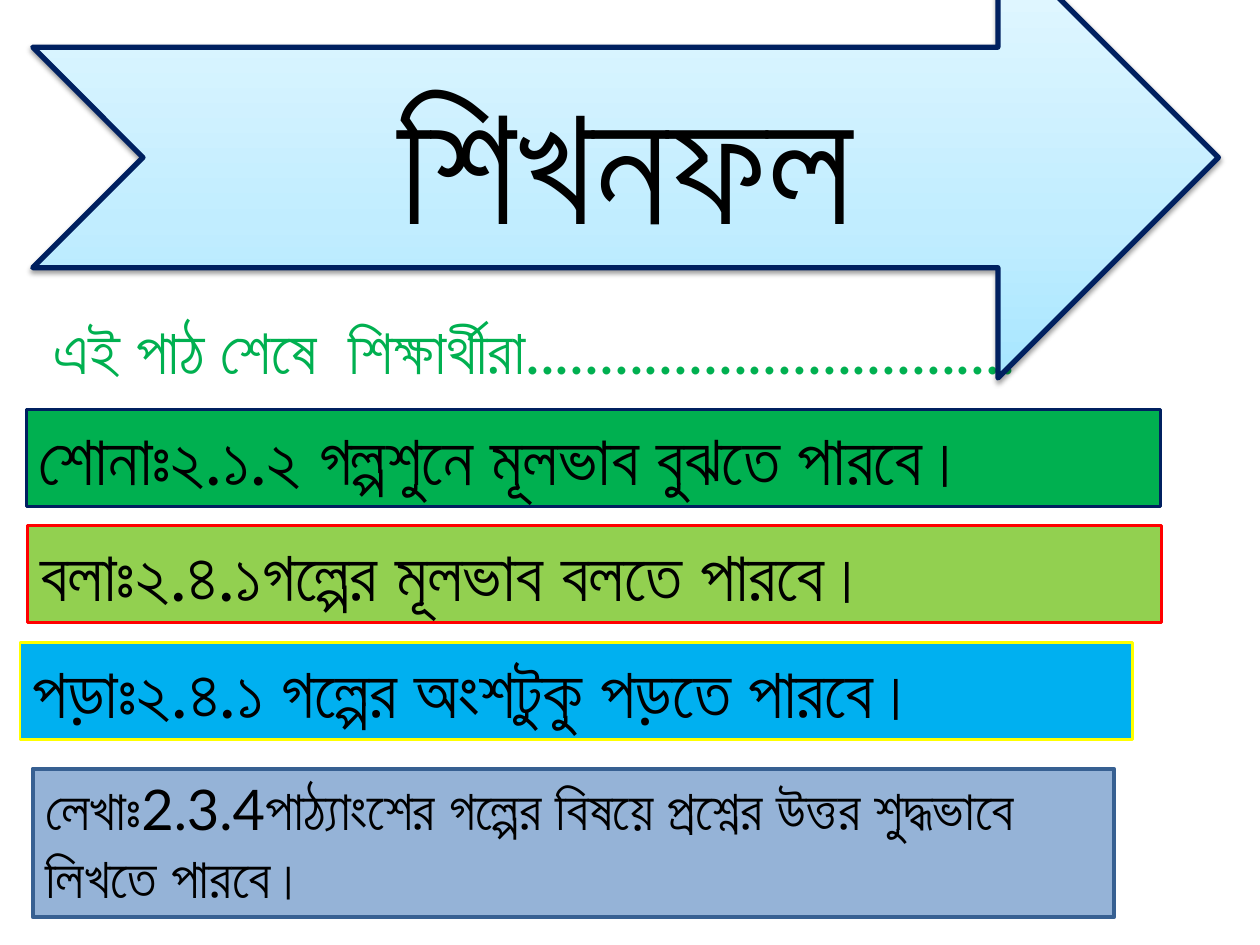
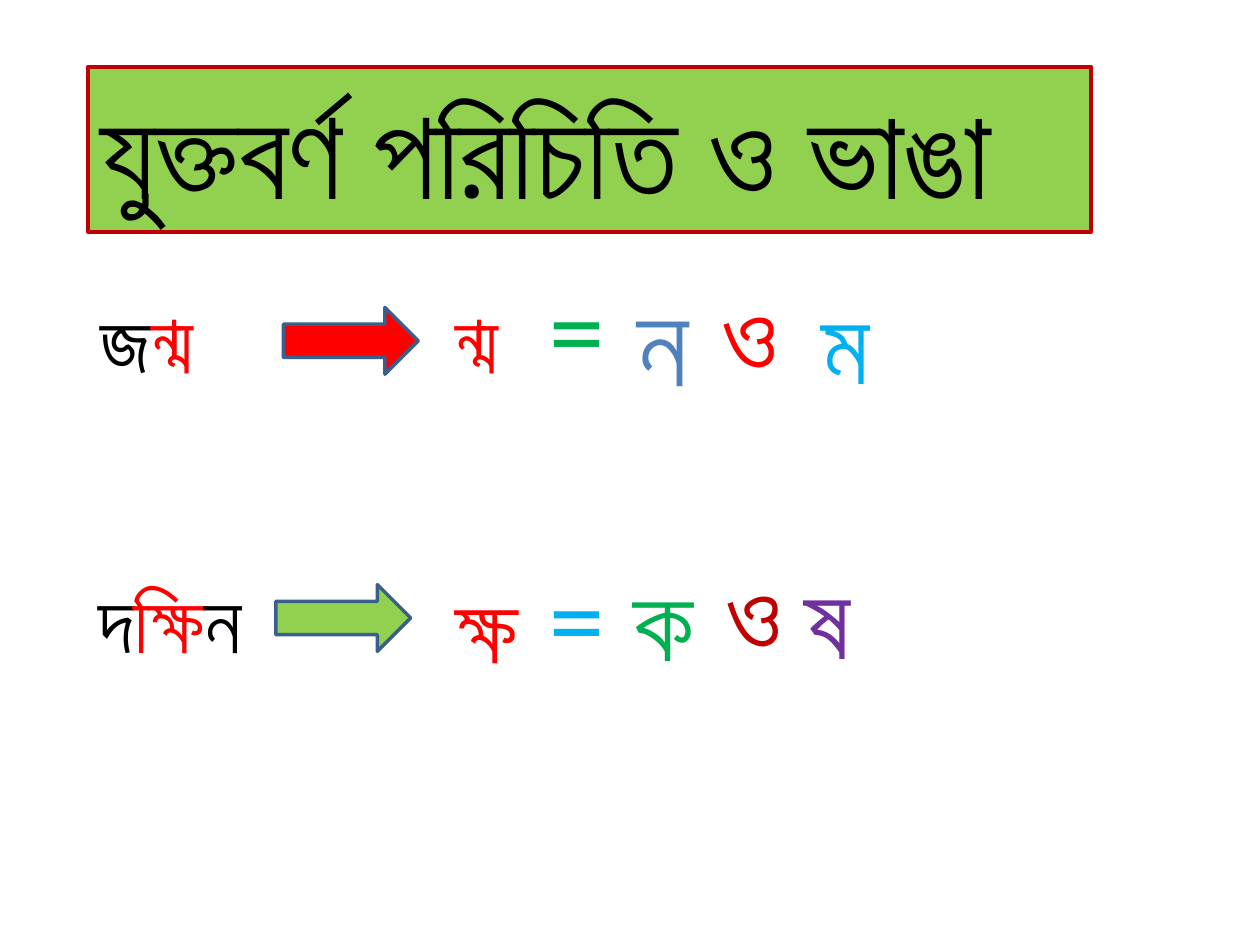
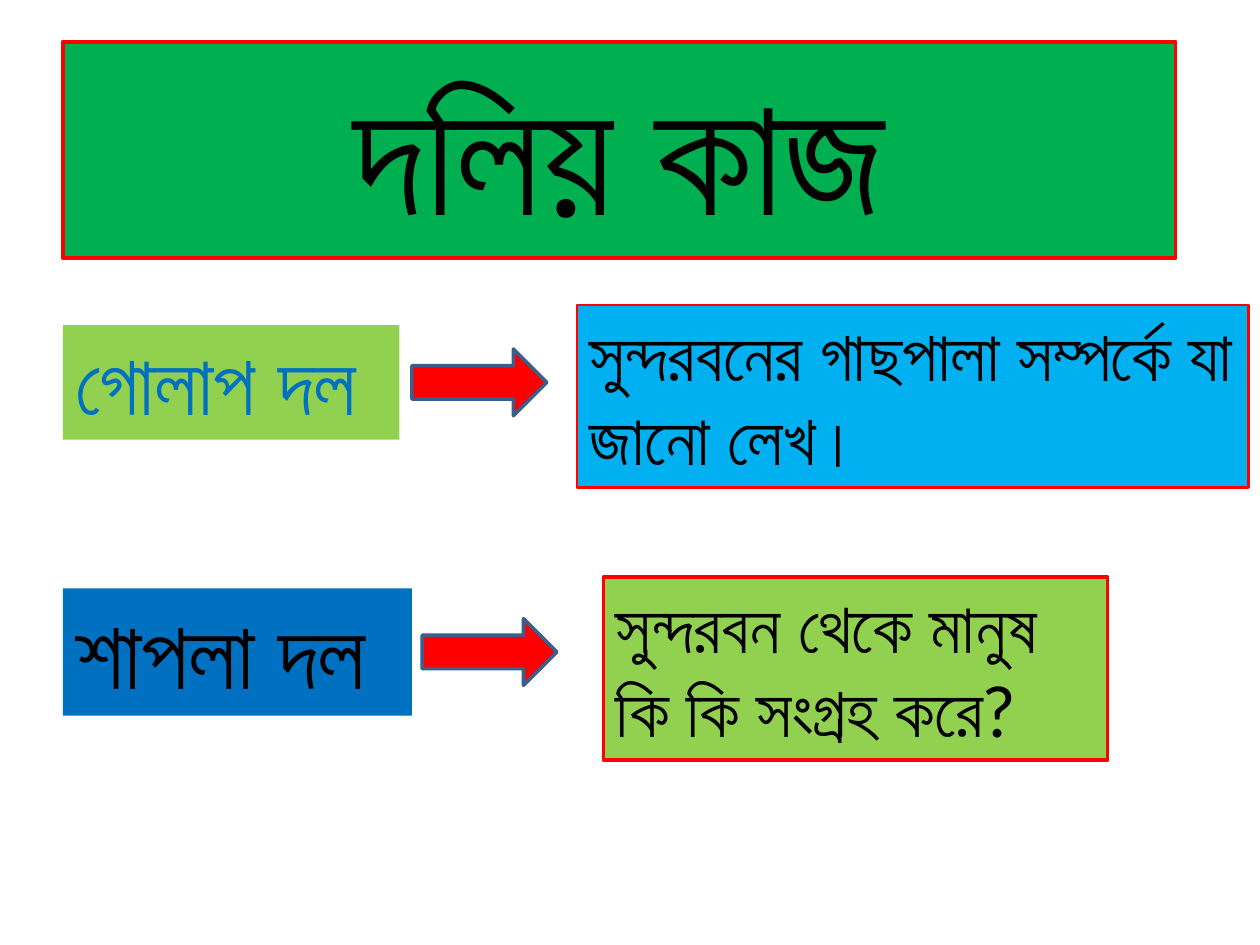
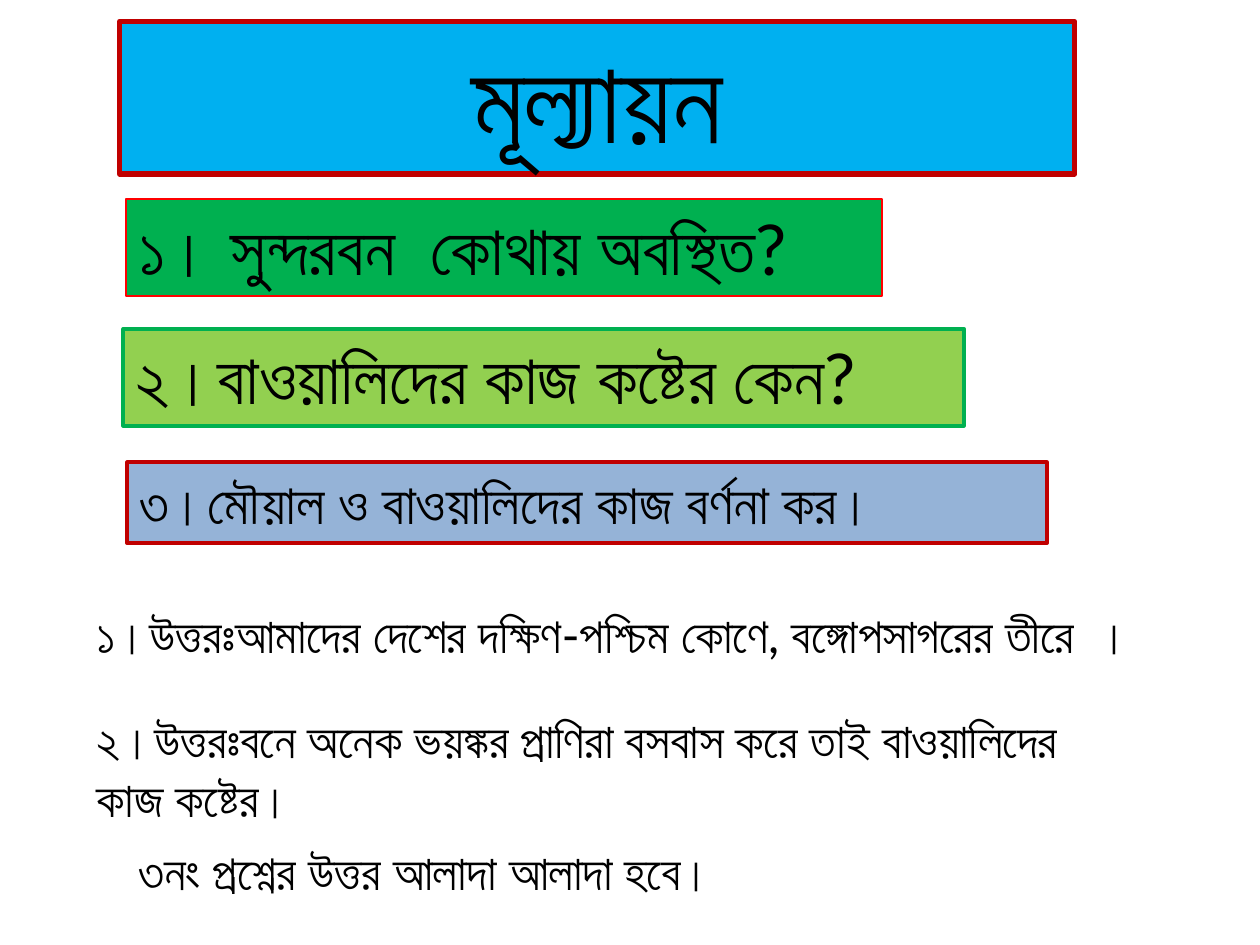
from copy import deepcopy

from lxml import etree
from pptx import Presentation
from pptx.dml.color import RGBColor
from pptx.enum.shapes import MSO_SHAPE
from pptx.enum.text import MSO_ANCHOR, MSO_AUTO_SIZE, PP_ALIGN
from pptx.oxml.ns import qn
from pptx.util import Inches, Pt

RECTANGLE = MSO_SHAPE.RECTANGLE
RIGHT_ARROW = MSO_SHAPE.RIGHT_ARROW
NOTCHED_ARROW = MSO_SHAPE.NOTCHED_RIGHT_ARROW
TOP, MIDDLE = MSO_ANCHOR.TOP, MSO_ANCHOR.MIDDLE
GROW, FIXED = MSO_AUTO_SIZE.SHAPE_TO_FIT_TEXT, MSO_AUTO_SIZE.NONE
LEFT, CENTER = PP_ALIGN.LEFT, PP_ALIGN.CENTER

FONT = "Lato"
TITLE_ONLY = 5
COLORS = {
    "black": "000000", "navy": "002060", "green": "00B050", "lime": "92D050",
    "red": "FF0000", "dark red": "C00000", "yellow": "FFFF00", "sky": "00B0F0",
    "blue": "0070C0", "steel": "4F81BD", "pale blue": "95B3D7",
    "deep blue": "376092", "arrow edge": "3A5F8C", "purple": "7030A0",
    "ice dark": "A7E6FF", "ice": "C1EDFF", "ice light": "E7F8FF",
}


def rgb(name):
    return RGBColor.from_string(COLORS[name])


def inches(box):
    return [Inches(length) for length in box]


def paint(shape, fill=None, line=None, width=1.5):
    if fill:
        shape.fill.solid()
        shape.fill.fore_color.rgb = rgb(fill)
    if line:
        shape.line.color.rgb = rgb(line)
        shape.line.width = Pt(width)
    else:
        shape.line.fill.background()


def write(shape, parts, size, align=LEFT, anchor=TOP, grow=True, bold=None):
    """Write (text, colour) parts as the runs of one paragraph."""
    frame = shape.text_frame
    frame.word_wrap = True
    frame.auto_size = GROW if grow else FIXED
    frame.vertical_anchor = anchor
    paragraph = frame.paragraphs[0]
    paragraph.alignment = align
    for text, color in parts:
        run = paragraph.add_run()
        run.text = text
        run.font.name = FONT
        run.font.size = Pt(size)
        run.font.bold = bold
        run.font.color.rgb = rgb(color)


def add_text(slide, box, parts, size):
    write(slide.shapes.add_textbox(*inches(box)), parts, size)


def add_panel(slide, box, text, size, fill, line=None, width=1.5,
              color="black", bold=None):
    panel = slide.shapes.add_shape(RECTANGLE, *inches(box))
    panel.shadow.inherit = False
    paint(panel, fill, line, width)
    write(panel, [(text, color)], size, bold=bold)


def add_arrow(slide, left, top, fill):
    arrow = slide.shapes.add_shape(RIGHT_ARROW, *inches((left, top, 1.07, 0.53)))
    arrow.shadow.inherit = False
    paint(arrow, fill, "arrow edge", 2)


def place_title(slide, box, text, size, align=CENTER, anchor=TOP, grow=True):
    title = slide.shapes.title
    title.left, title.top, title.width, title.height = inches(box)
    write(title, [(text, "black")], size, align, anchor, grow)
    return title


def new_slide(prs):
    return prs.slides.add_slide(prs.slide_layouts[TITLE_ONLY])


def title_banner(slide, box, text, size, fill, line, width=2.25, align=CENTER):
    paint(place_title(slide, box, text, size, align), fill, line, width)


def arrow_banner(slide, box, text):
    """Notched gradient arrow with the slide title on top of it."""
    arrow = slide.shapes.add_shape(NOTCHED_ARROW, *inches(box))
    paint(arrow, line="navy", width=3)
    arrow.fill.gradient()
    arrow.fill.gradient_angle = 90
    properties = arrow._element.spPr
    stop_list = properties.find(qn("a:gradFill")).find(qn("a:gsLst"))
    stop_list.insert(1, deepcopy(stop_list[0]))
    stops = ((0, "ice dark"), (0.35, "ice"), (1, "ice light"))
    for stop, (position, color) in zip(arrow.fill.gradient_stops, stops):
        stop.position = position
        stop.color.rgb = rgb(color)

    arrow.shadow.inherit = False
    shadow = etree.SubElement(
        properties.find(qn("a:effectLst")), qn("a:outerShdw"),
        blurRad=str(Pt(3.1)), dist=str(Pt(1.6)), dir="5400000", rotWithShape="0")
    shade = etree.SubElement(shadow, qn("a:srgbClr"), val=COLORS["black"])
    etree.SubElement(shade, qn("a:alpha"), val="38000")

    title = place_title(slide, box, text, 96, anchor=MIDDLE, grow=False)
    arrow._element.addnext(title._element)


def conjunct_row(slide, top, arrow, arrow_fill, glyphs):
    """Row splitting a conjunct; every top is counted from the row's top."""
    add_arrow(slide, arrow[0], top + arrow[1], arrow_fill)
    for left, drop, width, height, size, parts in glyphs:
        add_text(slide, (left, top + drop, width, height), parts, size)


def outcomes_slide(prs):
    slide = new_slide(prs)
    for box, text, size, fill, line, width in (
        ((0.21, 3.25, 9, 0.77), "শোনাঃ২.১.২ গল্পশুনে মূলভাব বুঝতে পারবে।",
         40, "green", "navy", 1.5),
        ((0.22, 4.17, 9, 0.77), "বলাঃ২.৪.১গল্পের মূলভাব বলতে পারবে।",
         40, "lime", "red", 1.5),
        ((0.16, 5.1, 8.83, 0.77), "পড়াঃ২.৪.১ গল্পের অংশটুকু পড়তে পারবে।",
         40, "sky", "yellow", 1.5),
        ((0.26, 6.1, 8.58, 1.18),
         "লেখাঃ2.3.4পাঠ্যাংশের গল্পের বিষয়ে প্রশ্নের উত্তর শুদ্ধভাবে লিখতে পারবে।",
         32, "pale blue", "deep blue", 2.25),
    ):
        add_panel(slide, box, text, size, fill, line, width)
    lead_in = "এই পাঠ শেষে  শিক্ষার্থীরা" + "." * 33
    add_text(slide, (0.33, 2.42, 9.17, 0.71), [(lead_in, "green")], 36)
    arrow_banner(slide, (0.26, -0.5, 9.41, 3.5), "শিখনফল")


def conjuncts_slide(prs):
    slide = new_slide(prs)
    title_banner(slide, (0.7, 0.53, 7.96, 1.31), "যুক্তবর্ণ পরিচিতি ও ভাঙা", 72,
                 "lime", "dark red", align=LEFT)
    conjunct_row(slide, 2.25, (2.25, 0.19), "red", (
        (0.7, 0, 1.38, 0.91, 48, [("জ", "black"), ("ন্ম", "red")]),
        (3.52, 0, 0.72, 0.91, 48, [("ন্ম", "red")]),
        (4.24, -0.19, 0.7, 1.11, 60, [("=", "green")]),
        (4.96, -0.15, 0.7, 1.21, 66, [("ন", "steel")]),
        (5.63, -0.16, 0.5, 1.11, 60, [("ও", "red")]),
        (6.42, -0.08, 0.75, 1.11, 60, [("ম", "sky")]),
    ))
    conjunct_row(slide, 4.47, (2.19, 0.17), "lime", (
        (0.68, 0, 1.43, 0.91, 48,
         [("দ", "black"), ("ক্ষি", "red"), ("ন", "black")]),
        (3.52, 0, 0.83, 1.01, 54, [("ক্ষ", "red")]),
        (4.24, -0.12, 0.7, 1.11, 60, [("=", "sky")]),
        (4.93, -0.1, 0.73, 1.11, 60, [("ক", "green")]),
        (5.66, -0.17, 0.76, 1.11, 60, [("ও", "dark red")]),
        (6.29, -0.12, 1, 1.11, 60, [("ষ", "purple")]),
    ))


def group_work_slide(prs):
    slide = new_slide(prs)
    title_banner(slide, (0.5, 0.33, 8.83, 1.72), "দলিয় কাজ", 96, "green", "red")

    add_panel(slide, (0.5, 2.58, 2.67, 0.91), "গোলাপ দল", 48, "lime",
              color="blue", bold=True)
    add_arrow(slide, 3.27, 2.77, "red")
    add_panel(slide, (4.58, 2.42, 5.33, 1.45),
              "সুন্দরবনের গাছপালা সম্পর্কে যা জানো লেখ।", 40, "sky", "red")

    add_panel(slide, (0.5, 4.67, 2.77, 1.01), "শাপলা দল", 54, "blue")
    add_arrow(slide, 3.35, 4.91, "red")
    add_panel(slide, (4.79, 4.58, 4, 1.45),
              "সুন্দরবন থেকে মানুষ কি কি সংগ্রহ করে?", 40, "lime", "red", 2.25)


def evaluation_slide(prs):
    slide = new_slide(prs)
    title_banner(slide, (0.95, 0.17, 7.58, 1.21), "মূল্যায়ন", 66,
                 "sky", "dark red", 3)
    for box, question, size, fill, line, width in (
        ((1, 1.58, 6, 0.77), "১। সুন্দরবন  কোথায় অবস্থিত?",
         40, "green", "red", 1.5),
        ((0.98, 2.61, 6.67, 0.77), "২।বাওয়ালিদের কাজ কষ্টের কেন?",
         40, "lime", "green", 2.25),
        ((1.01, 3.67, 7.3, 0.64), "৩।মৌয়াল ও বাওয়ালিদের কাজ বর্ণনা কর।",
         32, "pale blue", "dark red", 2.25),
    ):
        add_panel(slide, box, question, size, fill, line, width)
    for box, answer in (
        ((0.67, 4.75, 8.58, 0.57),
         "১।উত্তরঃআমাদের দেশের দক্ষিণ-পশ্চিম কোণে, বঙ্গোপসাগরের তীরে  ।"),
        ((0.67, 5.58, 8.33, 1.04),
         "২।উত্তরঃবনে অনেক ভয়ঙ্কর প্রাণিরা বসবাস করে তাই বাওয়ালিদের কাজ কষ্টের।"),
        ((1, 6.63, 7.54, 0.57), "৩নং প্রশ্নের উত্তর আলাদা আলাদা হবে।"),
    ):
        add_text(slide, box, [(answer, "black")], 28)


def main():
    prs = Presentation()
    prs.slide_width, prs.slide_height = Inches(10), Inches(7.5)
    outcomes_slide(prs)
    conjuncts_slide(prs)
    group_work_slide(prs)
    evaluation_slide(prs)
    prs.save("out.pptx")


if __name__ == "__main__":
    main()
